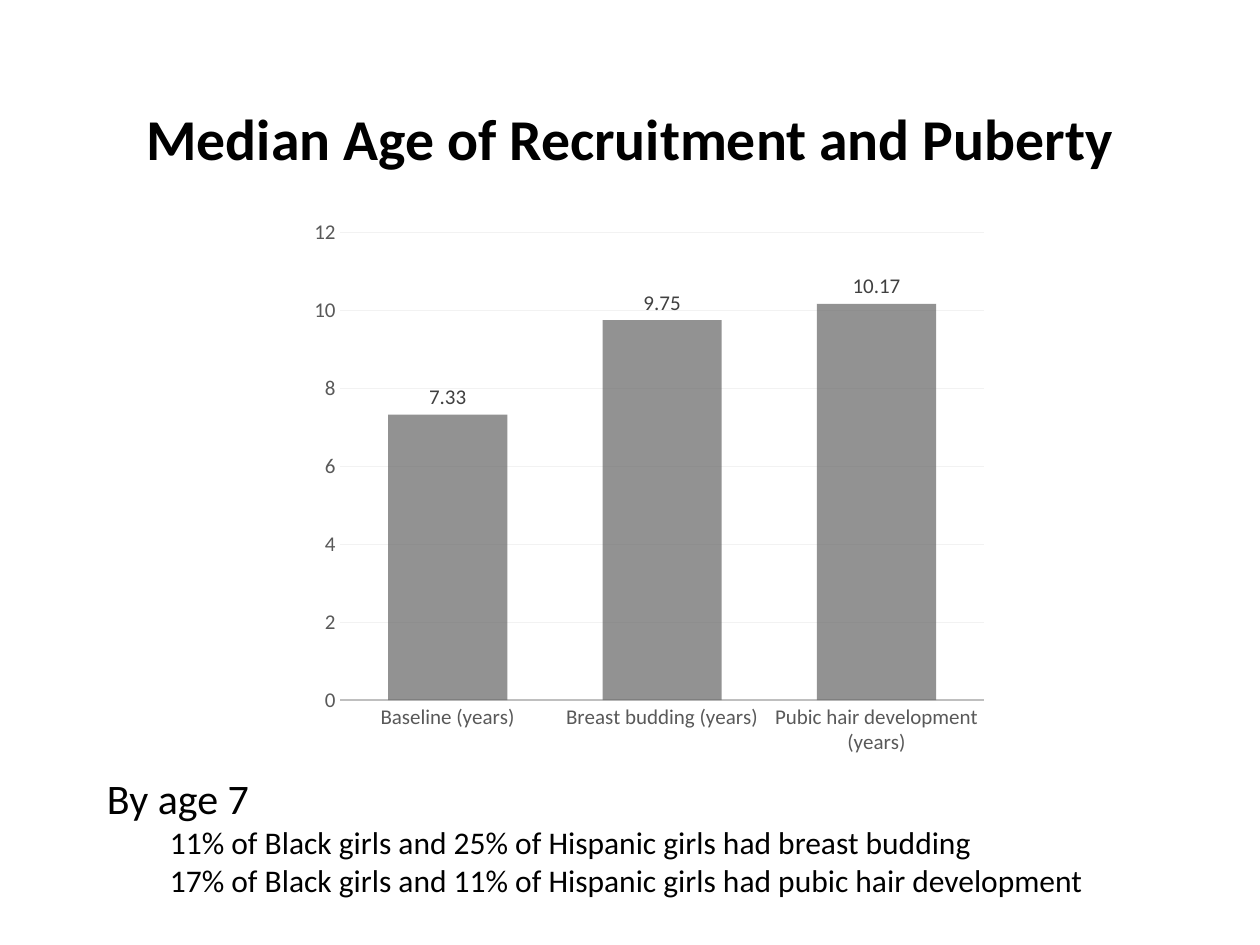
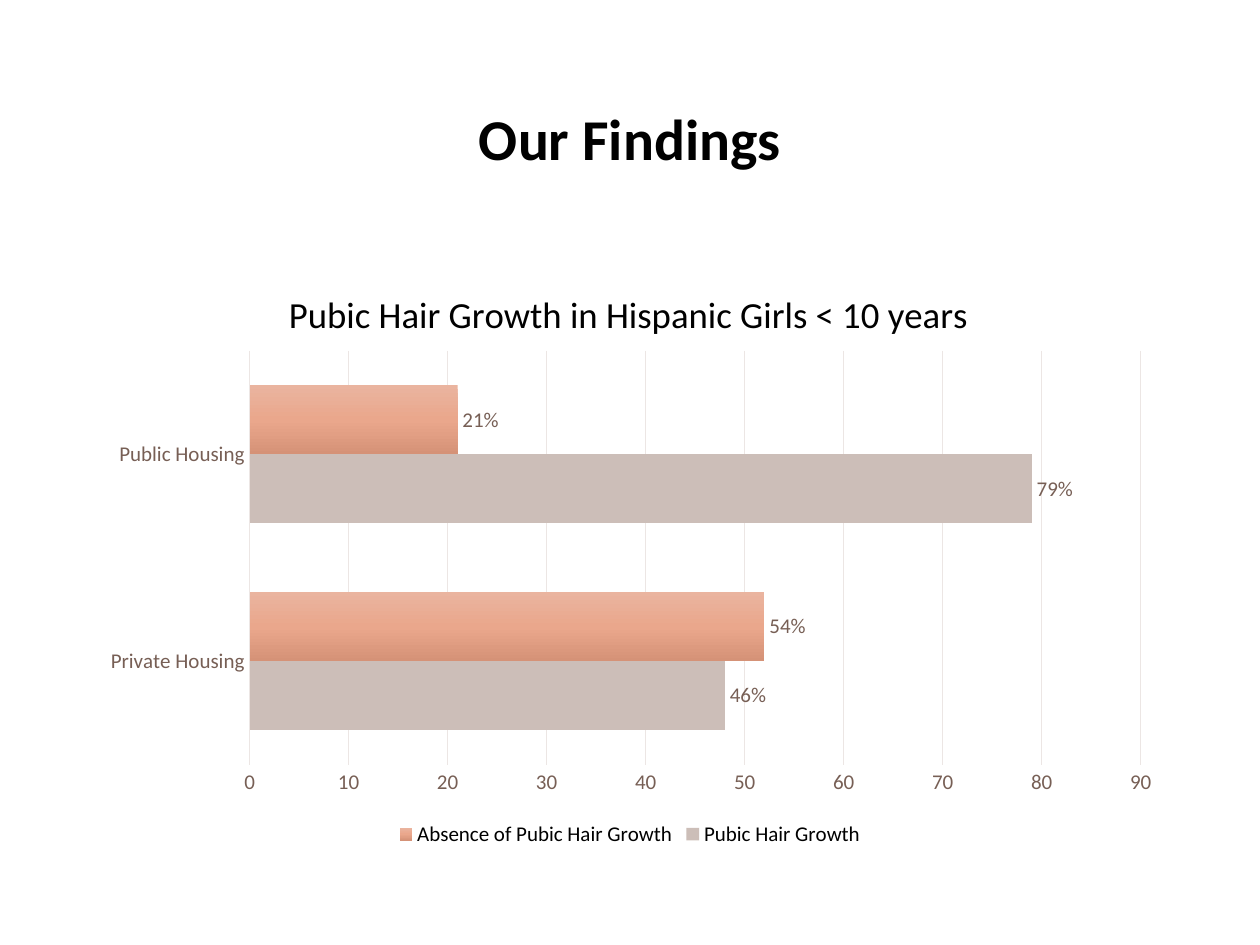
"""Build two slides on puberty findings, each a titled chart."""
from dataclasses import dataclass
from typing import Optional

from lxml import etree
from pptx import Presentation
from pptx import util as u
from pptx.chart import data as chart_data
from pptx.dml.color import RGBColor
from pptx.enum import chart as charts, text
from pptx.oxml import ns

FONT = "Calibri"
BLACK = RGBColor(0x00, 0x00, 0x00)
DARK_GRAY = RGBColor(0x40, 0x40, 0x40)
AXIS_GRAY = RGBColor(0x59, 0x59, 0x59)
BAR_GRAY = RGBColor(0x64, 0x64, 0x64)
LINE_GRAY = RGBColor(0xBF, 0xBF, 0xBF)
GRID_GRAY = RGBColor(0xF2, 0xF2, 0xF2)
BROWN = RGBColor(0x77, 0x5F, 0x55)
PALE_BROWN = RGBColor(0xEC, 0xE6, 0xE4)
TAUPE = RGBColor(0xCC, 0xBE, 0xB8)
PEACH_LIGHT = RGBColor(0xEA, 0xB4, 0x9F)
PEACH = RGBColor(0xEA, 0xA7, 0x8C)
PEACH_DARK = RGBColor(0xD5, 0x92, 0x77)


@dataclass(frozen=True)
class Box:
    """Position and size in points."""
    left: float
    top: float
    width: float
    height: float

    def lengths(self) -> tuple:
        """Return the four lengths for python-pptx."""
        return tuple(u.Pt(n) for n in (self.left, self.top, self.width, self.height))


@dataclass(frozen=True)
class BarSeries:
    """One series; several colors make a vertical gradient."""
    name: str
    values: tuple
    colors: tuple
    label_color: RGBColor
    labels: tuple = ()
    opacity: int = 100


@dataclass(frozen=True)
class BarChart:
    """A bar or column chart with its axis style."""
    kind: charts.XL_CHART_TYPE
    box: Box
    plot_area: dict
    categories: tuple
    series: tuple
    maximum: float
    step: float
    gap: int
    overlap: int
    axis_color: RGBColor
    line_color: RGBColor
    line_width: float
    grid_color: RGBColor
    title: Optional[str] = None
    legend: bool = False


TITLE_BOX = Box(49.5, 28.8, 621, 104.4)
NOTES_BOX = Box(18, 437.8, 702, 80)
NOTES = (
    ("By age 7", 24, 36),
    ("11% of Black girls and 25% of Hispanic girls had breast budding", 18, 72),
    ("17% of Black girls and 11% of Hispanic girls had pubic hair development", 18, 72),
)

AGE_CHART = BarChart(
    kind=charts.XL_CHART_TYPE.COLUMN_CLUSTERED,
    box=Box(170.6, 120.2, 399.6, 318.2),
    plot_area={"x": 0.06, "y": 0.04, "w": 0.92, "h": 0.84},
    categories=("Baseline (years)", "Breast budding (years)",
                "Pubic hair development (years)"),
    series=(BarSeries("Series 1", (7.33, 9.75, 10.17), (BAR_GRAY,), DARK_GRAY,
                      opacity=70),),
    maximum=12, step=2, gap=80, overlap=25,
    axis_color=AXIS_GRAY, line_color=LINE_GRAY, line_width=1.25,
    grid_color=GRID_GRAY,
)

HOUSING_CHART = BarChart(
    kind=charts.XL_CHART_TYPE.BAR_CLUSTERED,
    box=Box(49.5, 144, 621, 342.7),
    plot_area={"x": 0.15, "y": 0.165, "w": 0.82, "h": 0.69},
    categories=("Private Housing", "Public Housing"),
    series=(
        BarSeries("Pubic Hair Growth", (48, 79), (TAUPE,), BROWN, ("46%", "79%")),
        BarSeries("Absence of Pubic Hair Growth", (52, 21),
                  (PEACH_LIGHT, PEACH, PEACH_DARK), BROWN, ("54%", "21%")),
    ),
    maximum=90, step=10, gap=100, overlap=0,
    axis_color=BROWN, line_color=PALE_BROWN, line_width=0.75,
    grid_color=PALE_BROWN,
    title="Pubic Hair Growth in Hispanic Girls < 10 years", legend=True,
)


def style_font(font, size: float, color: RGBColor, bold: bool = False) -> None:
    """Apply the shared typeface with a size and color."""
    font.name, font.size, font.bold = FONT, u.Pt(size), bold
    font.color.rgb = color


def write_text(paragraph, content: str, *, size: float, color: RGBColor = BLACK,
               bold: bool = False, align=None, spacing=None, indent: float = 0) -> None:
    """Write one formatted run into a paragraph."""
    run = paragraph.add_run()
    run.text = content
    style_font(run.font, size, color, bold)
    if align is not None:
        paragraph.alignment = align
    if spacing is not None:
        paragraph.line_spacing = spacing
    if indent:
        paragraph._p.get_or_add_pPr().set("marL", str(u.Pt(indent)))


def add_text_frame(slide, box: Box, anchor):
    """Add a wrapping text box and return its text frame."""
    frame = slide.shapes.add_textbox(*box.lengths()).text_frame
    frame.word_wrap = True
    frame.vertical_anchor = anchor
    return frame


def add_titled_slide(presentation, title: str):
    """Add a blank slide with the shared title style."""
    slide = presentation.slides.add_slide(presentation.slide_layouts[6])
    frame = add_text_frame(slide, TITLE_BOX, text.MSO_ANCHOR.MIDDLE)
    write_text(frame.paragraphs[0], title, size=33, bold=True,
               align=text.PP_ALIGN.CENTER, spacing=0.9)
    return slide


def add_notes(slide) -> None:
    """Add the indented lines below the age chart."""
    frame = add_text_frame(slide, NOTES_BOX, text.MSO_ANCHOR.TOP)
    for index, (content, size, indent) in enumerate(NOTES):
        paragraph = frame.add_paragraph() if index else frame.paragraphs[0]
        write_text(paragraph, content, size=size, indent=indent)


def set_layout(element, index: int, fractions: dict, inner: bool = False) -> None:
    """Place a chart part by fractions of the chart area."""
    for old in element.findall(ns.qn("c:layout")):
        element.remove(old)
    layout = etree.Element(ns.qn("c:layout"))
    manual = etree.SubElement(layout, ns.qn("c:manualLayout"))
    if inner:
        etree.SubElement(manual, ns.qn("c:layoutTarget")).set("val", "inner")
    for axis in ("x", "y"):
        etree.SubElement(manual, ns.qn(f"c:{axis}Mode")).set("val", "edge")
    for key, value in fractions.items():
        etree.SubElement(manual, ns.qn(f"c:{key}")).set("val", str(value))
    element.insert(index, layout)


def fill_series(series, design: BarSeries) -> None:
    """Fill bars with a plain color or an even vertical gradient."""
    fill = series.format.fill
    if len(design.colors) == 1:
        fill.solid()
        fill.fore_color.rgb = design.colors[0]
        if design.opacity < 100:
            color = series._element.find(".//" + ns.qn("a:srgbClr"))
            etree.SubElement(color, ns.qn("a:alpha")).set("val", str(design.opacity * 1000))
        return
    properties = series._element.get_or_add_spPr()
    gradient = etree.SubElement(properties, ns.qn("a:gradFill"))
    stops = etree.SubElement(gradient, ns.qn("a:gsLst"))
    for index, color in enumerate(design.colors):
        position = 100000 * index // (len(design.colors) - 1)
        stop = etree.SubElement(stops, ns.qn("a:gs"), pos=str(position))
        etree.SubElement(stop, ns.qn("a:srgbClr"), val=str(color))
    etree.SubElement(gradient, ns.qn("a:lin"), ang="5400000", scaled="0")


def label_series(series, design: BarSeries) -> None:
    """Show values, or the given wording, beyond the bar ends."""
    position = charts.XL_LABEL_POSITION.OUTSIDE_END
    labels = series.data_labels
    labels.show_value = True
    labels.position = position
    style_font(labels.font, 12, design.label_color)
    for index, content in enumerate(design.labels):
        label = series.points[index].data_label
        write_text(label.text_frame.paragraphs[0], content, size=12,
                   color=design.label_color)
        label.position = position


def style_axes(chart, design: BarChart) -> None:
    """Style both axes and the gridlines."""
    for axis in (chart.category_axis, chart.value_axis):
        axis.major_tick_mark = axis.minor_tick_mark = charts.XL_TICK_MARK.NONE
        style_font(axis.tick_labels.font, 12, design.axis_color)
    category_line = chart.category_axis.format.line
    category_line.color.rgb = design.line_color
    category_line.width = u.Pt(design.line_width)
    value_axis = chart.value_axis
    value_axis.minimum_scale, value_axis.maximum_scale = 0, design.maximum
    value_axis.major_unit = design.step
    value_axis.format.line.fill.background()
    value_axis.has_major_gridlines = True
    grid_line = value_axis.major_gridlines.format.line
    grid_line.color.rgb = design.grid_color
    grid_line.width = u.Pt(0.75)


def add_bar_chart(slide, design: BarChart) -> None:
    """Add a native chart from its design."""
    data = chart_data.CategoryChartData()
    data.categories = design.categories
    for item in design.series:
        data.add_series(item.name, item.values)
    chart = slide.shapes.add_chart(design.kind, *design.box.lengths(), data).chart
    style_font(chart.font, 10, BLACK)
    chart.has_title = design.title is not None
    if design.title is not None:
        title = chart.chart_title
        write_text(title.text_frame.paragraphs[0], design.title, size=21)
        title.include_in_layout = False
        set_layout(title._element, 1, {"x": 0.18, "y": 0.05})
    chart.has_legend = design.legend
    if design.legend:
        chart.legend.position = charts.XL_LEGEND_POSITION.BOTTOM
        chart.legend.include_in_layout = False
        style_font(chart.legend.font, 12, BLACK)
    plot = chart.plots[0]
    plot.vary_by_categories = False
    plot.gap_width, plot.overlap = design.gap, design.overlap
    for series, item in zip(plot.series, design.series):
        series.invert_if_negative = False
        fill_series(series, item)
        label_series(series, item)
    style_axes(chart, design)
    plot_area = chart._chartSpace.find(".//" + ns.qn("c:plotArea"))
    set_layout(plot_area, 0, design.plot_area, inner=True)


def main() -> None:
    """Build and save the presentation."""
    presentation = Presentation()
    presentation.slide_width, presentation.slide_height = u.Pt(720), u.Pt(540)
    age_slide = add_titled_slide(presentation, "Median Age of Recruitment and Puberty")
    add_bar_chart(age_slide, AGE_CHART)
    add_notes(age_slide)
    findings_slide = add_titled_slide(presentation, "Our Findings")
    add_bar_chart(findings_slide, HOUSING_CHART)
    presentation.save("out.pptx")


if __name__ == "__main__":
    main()
